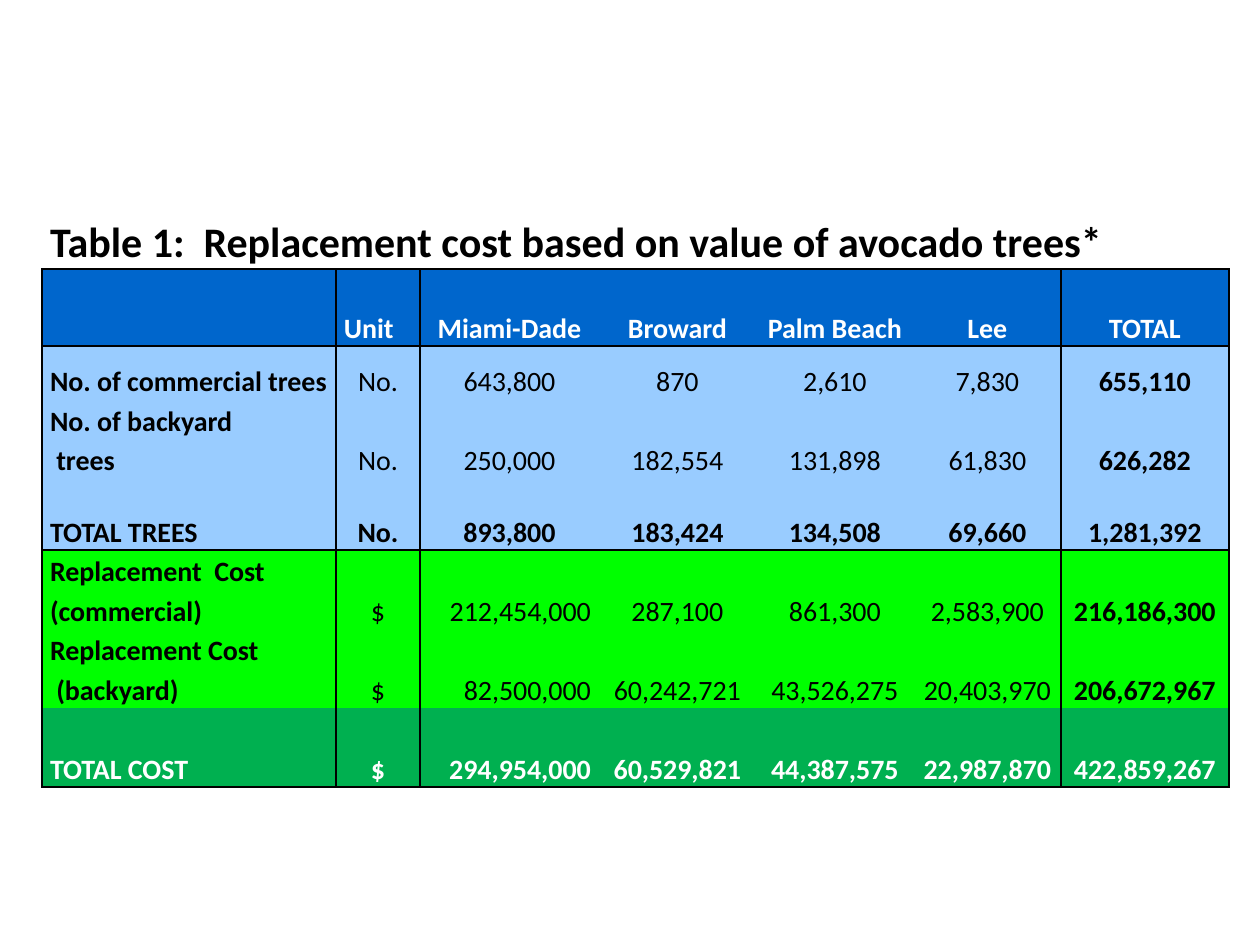
from dataclasses import dataclass

from lxml.etree import SubElement
from pptx import Presentation
from pptx.dml.color import RGBColor
from pptx.enum.text import MSO_ANCHOR, PP_ALIGN
from pptx.oxml.ns import qn
from pptx.table import Table, _Cell
from pptx.util import Emu, Pt

PX = 914400 // 126  # EMU in one px


@dataclass(frozen=True)
class Theme:
    font: str = "Calibri"
    title_size: int = 24
    body_size: int = 16
    line_spacing: float = 1.15
    ink: str = "000000"
    white: str = "FFFFFF"
    header: str = "0066CC"
    trees: str = "99CCFF"
    cost: str = "00FF00"
    total_cost: str = "00B050"


@dataclass(frozen=True)
class Row:
    height: int
    fill: str
    texts: tuple[str, ...]
    color: str = Theme.ink
    bold: bool = False  # label and TOTAL are bold in every row
    rule_below: bool = False
    wide_figures: bool = False  # Miami-Dade figure sits at the right


THEME = Theme()
LEFT, TOP, TITLE_HEIGHT, MARGIN = 42, 210, 59, 8
COLUMN_WIDTHS = (294, 84, 179, 157, 158, 147, 168)
RULED_COLUMNS = {0, 1, 2, 6, 7}  # column edges with a vertical line
TITLE = "Table 1:  Replacement cost based on value of avocado trees*"
ROWS = (
    Row(77, THEME.header, ("", "Unit", "Miami-Dade", "Broward", "Palm Beach", "Lee", "TOTAL"),
        color=THEME.white, bold=True, rule_below=True),
    Row(53, THEME.trees, ("No. of commercial trees", "No.", "643,800", "870", "2,610", "7,830", "655,110")),
    Row(79, THEME.trees,
        ("No. of backyard\n trees", "No.", "250,000", "182,554", "131,898", "61,830", "626,282")),
    Row(72, THEME.trees, ("TOTAL TREES", "No.", "893,800", "183,424", "134,508", "69,660", "1,281,392"),
        bold=True, rule_below=True),
    Row(79, THEME.cost,
        ("Replacement  Cost (commercial)", "$", "212,454,000", "287,100", "861,300", "2,583,900", "216,186,300"),
        wide_figures=True),
    Row(79, THEME.cost,
        ("Replacement Cost\n (backyard)", "$", "82,500,000", "60,242,721", "43,526,275", "20,403,970",
         "206,672,967"), wide_figures=True),
    Row(79, THEME.total_cost,
        ("TOTAL COST", "$", "294,954,000", "60,529,821", "44,387,575", "22,987,870", "422,859,267"),
        color=THEME.white, bold=True, rule_below=True, wide_figures=True),
)


def px(length: int) -> Emu:
    return Emu(length * PX)


def write_text(cell: _Cell, text: str, *, size: int = THEME.body_size, color: str = THEME.ink,
               bold: bool = False, align: PP_ALIGN = PP_ALIGN.LEFT) -> None:
    cell.vertical_anchor = MSO_ANCHOR.BOTTOM
    cell.margin_left = cell.margin_right = px(MARGIN)
    cell.margin_top = cell.margin_bottom = 0
    cell.text_frame.text = text
    for para in cell.text_frame.paragraphs:
        para.alignment = align
        para.line_spacing = THEME.line_spacing
        para.font.size = Pt(size)
        for span in para.runs:
            span.font.name = THEME.font
            span.font.size = Pt(size)
            span.font.bold = bold
            span.font.color.rgb = RGBColor.from_string(color)


def set_borders(cell: _Cell, *, left: bool = False, right: bool = False,
                top: bool = False, bottom: bool = False) -> None:
    properties = cell._tc.get_or_add_tcPr()
    for side, shown in zip("LRTB", (left, right, top, bottom)):
        line = SubElement(properties, qn(f"a:ln{side}"), w=str(Pt(1)))
        if shown:
            fill = SubElement(line, qn("a:solidFill"))
            SubElement(fill, qn("a:srgbClr"), val=THEME.ink)
        else:
            SubElement(line, qn("a:noFill"))


def alignment(row: Row, column: int) -> PP_ALIGN:
    if column == 0 or row.texts[column] == "Unit":
        return PP_ALIGN.LEFT
    if column == 2 and row.wide_figures:
        return PP_ALIGN.RIGHT
    return PP_ALIGN.CENTER


def draw_title(table: Table) -> None:
    table.rows[0].height = px(TITLE_HEIGHT)
    table.cell(0, 0).merge(table.cell(0, len(COLUMN_WIDTHS) - 1))
    for cell in table.rows[0].cells:
        set_borders(cell, bottom=True)
        cell.fill.background()
    write_text(table.cell(0, 0), TITLE, size=THEME.title_size, bold=True)


def draw_row(table: Table, index: int, row: Row, rule_above: bool) -> None:
    table.rows[index].height = px(row.height)
    for column, text in enumerate(row.texts):
        cell = table.cell(index, column)
        set_borders(cell, left=column in RULED_COLUMNS, right=column + 1 in RULED_COLUMNS,
                    top=rule_above, bottom=row.rule_below)
        cell.fill.solid()
        cell.fill.fore_color.rgb = RGBColor.from_string(row.fill)
        write_text(cell, text, color=row.color, bold=row.bold or column in (0, 6),
                   align=alignment(row, column))


def main() -> None:
    deck = Presentation()
    deck.slide_width, deck.slide_height = px(1260), px(945)
    page = deck.slides.add_slide(deck.slide_layouts[6])

    # Table frame
    height = TITLE_HEIGHT + sum(row.height for row in ROWS)
    table = page.shapes.add_table(len(ROWS) + 1, len(COLUMN_WIDTHS), px(LEFT), px(TOP),
                                  px(sum(COLUMN_WIDTHS)), px(height)).table
    table.first_row = table.horz_banding = False
    for column, width in zip(table.columns, COLUMN_WIDTHS):
        column.width = px(width)

    # Title row, then header and figures
    draw_title(table)
    rule_above = True
    for index, row in enumerate(ROWS, start=1):
        draw_row(table, index, row, rule_above)
        rule_above = row.rule_below

    deck.save("out.pptx")


if __name__ == "__main__":
    main()
